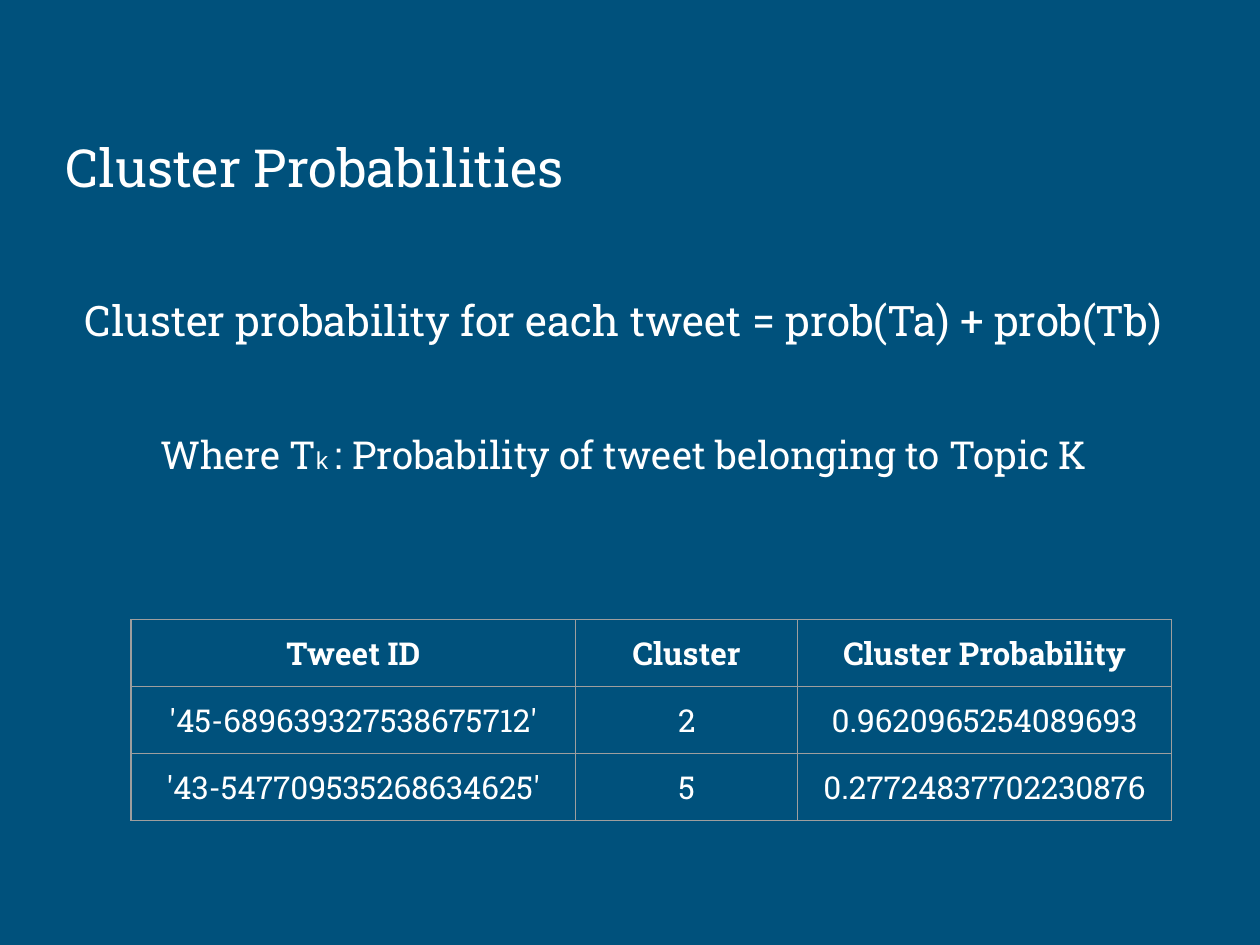
from lxml.etree import SubElement
from pptx import Presentation
from pptx.dml.color import RGBColor
from pptx.enum.text import MSO_ANCHOR, PP_ALIGN
from pptx.oxml.ns import qn
from pptx.util import Inches, Pt

NAVY = RGBColor(0x00, 0x51, 0x7C)
WHITE = RGBColor(0xFF, 0xFF, 0xFF)
GRAY = RGBColor(0x9E, 0x9E, 0x9E)
SLAB = "Roboto Slab"
MARGIN = Inches(0.1)


class SlideBuilder:
    def __init__(self, prs):
        self.s = prs.slides.add_slide(prs.slide_layouts[5])
        fill = self.s.background.fill
        fill.solid()
        fill.fore_color.rgb = NAVY

    def run(self, p, text, size, font=SLAB, bold=False):
        r = p.add_run()
        r.text = text
        r.font.size = Pt(size)
        r.font.name = font
        r.font.bold = bold
        r.font.color.rgb = WHITE

    def frame(self, tf, anchor):
        tf.word_wrap = True
        tf.vertical_anchor = anchor
        tf.margin_left = tf.margin_right = MARGIN
        tf.margin_top = tf.margin_bottom = MARGIN

    def title(self, text, left, top, width, height):
        sp = self.s.shapes.title
        sp.left, sp.top = Inches(left), Inches(top)
        sp.width, sp.height = Inches(width), Inches(height)
        self.frame(sp.text_frame, MSO_ANCHOR.BOTTOM)
        p = sp.text_frame.paragraphs[0]
        p.alignment = PP_ALIGN.LEFT
        self.run(p, text, 30)

    def text(self, paragraphs, left, top, width, height, gap):
        sp = self.s.shapes.add_textbox(
            Inches(left), Inches(top), Inches(width), Inches(height))
        tf = sp.text_frame
        self.frame(tf, MSO_ANCHOR.TOP)
        for i, runs in enumerate(paragraphs):
            p = tf.add_paragraph() if i else tf.paragraphs[0]
            p.alignment = PP_ALIGN.CENTER
            p.line_spacing = 1.5
            if i:
                p.space_before = Pt(gap)
            for r in runs:
                self.run(p, *r)

    def border(self, cell):
        tc_pr = cell._tc.get_or_add_tcPr()
        for i, side in enumerate(("lnL", "lnR", "lnT", "lnB")):
            ln = SubElement(tc_pr, qn(f"a:{side}"), w=str(Pt(0.75)))
            tc_pr.insert(i, ln)
            solid = SubElement(ln, qn("a:solidFill"))
            SubElement(solid, qn("a:srgbClr"), val=str(GRAY))

    def table(self, rows, left, top, widths, row_height):
        tbl = self.s.shapes.add_table(
            len(rows), len(widths), Inches(left), Inches(top),
            Inches(sum(widths)), Inches(row_height * len(rows))).table
        for col, width in zip(tbl.columns, widths):
            col.width = Inches(width)
        for i, row in enumerate(rows):
            for j, text in enumerate(row):
                cell = tbl.cell(i, j)
                cell.fill.background()
                cell.margin_left = cell.margin_right = MARGIN
                cell.margin_top = cell.margin_bottom = MARGIN
                self.border(cell)
                p = cell.text_frame.paragraphs[0]
                p.alignment = PP_ALIGN.CENTER
                self.run(p, text, 18, bold=i == 0)


def main():
    prs = Presentation()
    prs.slide_width, prs.slide_height = Inches(10), Inches(7.5)
    b = SlideBuilder(prs)
    b.title("Cluster Probabilities", 0.42, 0.67, 9.15, 1)
    b.text([
        [("Cluster probability for each tweet = prob(Ta) + prob(Tb)", 24)],
        [("Where T", 22), ("k ", 14, "Arial"),
         (": Probability of tweet belonging to Topic K", 22)],
    ], 0.5, 2.04, 8.9, 2.06, gap=36)
    b.table([
        ("Tweet ID", "Cluster", "Cluster Probability"),
        ("'45-689639327538675712'", "2", "0.9620965254089693"),
        ("'43-547709535268634625'", "5", "0.27724837702230876"),
    ], 1.04, 4.92, (3.53, 1.76, 2.97), 0.53)
    prs.save("out.pptx")


if __name__ == "__main__":
    main()
